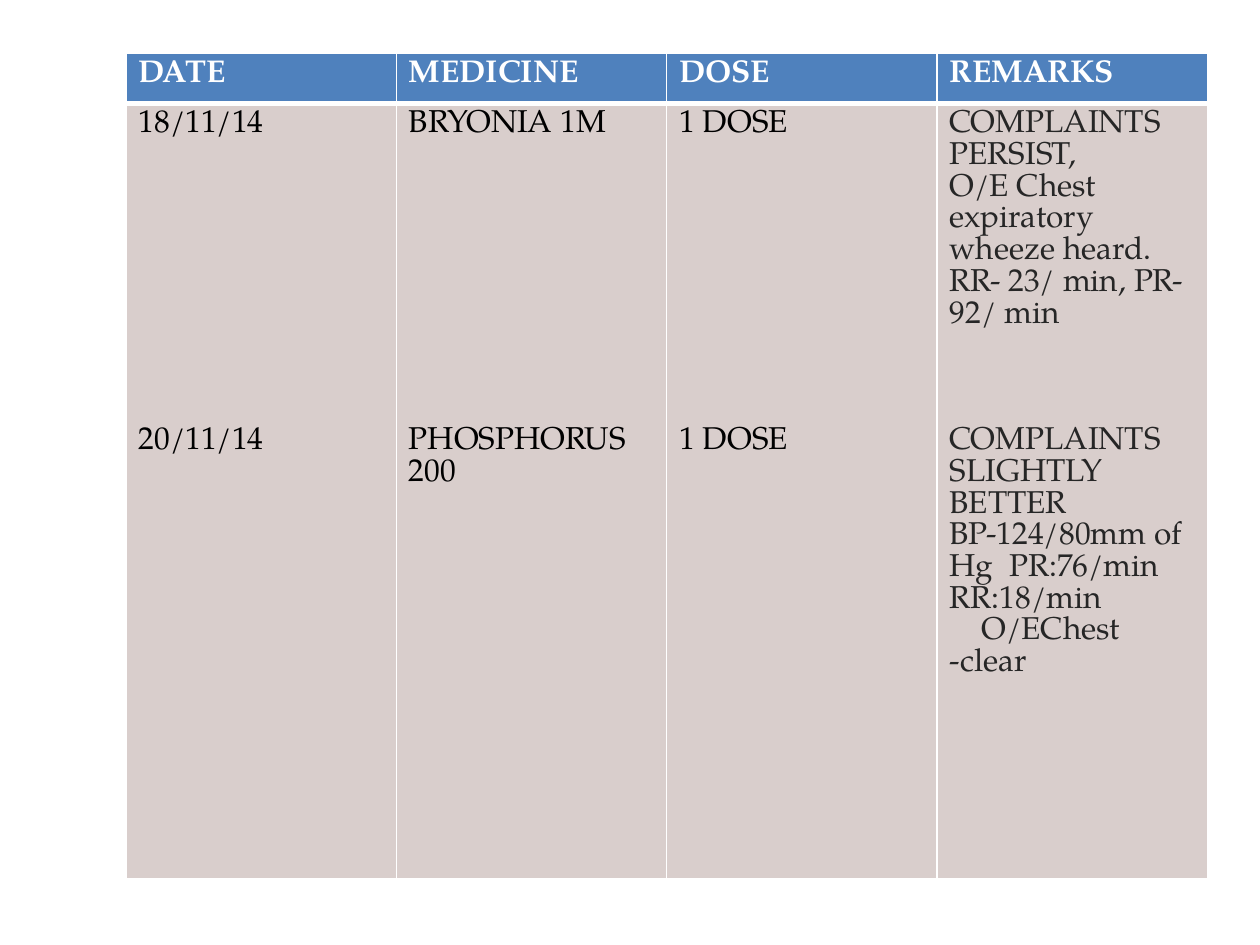
from dataclasses import dataclass

from lxml import etree
from pptx import Presentation
from pptx.dml.color import RGBColor
from pptx.oxml import ns
from pptx.util import Cm, Pt


@dataclass(frozen=True)
class Theme:
    font: str = "TeX Gyre Pagella"
    size: float = 18
    head: str = "4F81BD"
    body: str = "D9CECC"
    white: str = "FFFFFF"
    black: str = "000000"
    grey: str = "262626"
    thin: float = 1
    thick: float = 3


@dataclass(frozen=True)
class Para:
    text: str
    gap: float = 0
    indent: float = 0


@dataclass(frozen=True)
class Column:
    head: str
    paras: tuple[Para, ...]
    ink: str


THEME = Theme()
LINE = 18.1


def visits(first: str, second: str) -> tuple[Para, ...]:
    return Para(first), Para(second, gap=9 * LINE)


COLUMNS = (
    Column("DATE", visits("18/11/14", "20/11/14"), THEME.black),
    Column("MEDICINE", visits("BRYONIA 1M", "PHOSPHORUS 200"), THEME.black),
    Column("DOSE", visits("1 DOSE", "1 DOSE"), THEME.black),
    Column("REMARKS", (
        Para("COMPLAINTS PERSIST,"),
        Para("O/E Chest expiratory wheeze heard."),
        Para("RR- 23/ min, PR- 92/ min"),
        Para("COMPLAINTS SLIGHTLY BETTER", gap=3 * LINE),
        Para("BP-124/80mm of Hg  PR:76/min RR:18/min"),
        Para("O/EChest  -clear", indent=0.64),
    ), THEME.grey),
)


def edge(cell, side: str, width: float) -> None:
    props = cell._tc.get_or_add_tcPr()
    line = etree.SubElement(props, ns.qn(f"a:ln{side}"), w=str(Pt(width)))
    fill = etree.SubElement(line, ns.qn("a:solidFill"))
    etree.SubElement(fill, ns.qn("a:srgbClr"), val=THEME.white)


def write(cell, paras: tuple[Para, ...], ink: str, bold: bool) -> None:
    frame = cell.text_frame
    for index, item in enumerate(paras):
        para = frame.add_paragraph() if index else frame.paragraphs[0]
        if item.gap:
            para.space_before = Pt(item.gap)
        if item.indent:
            para._p.get_or_add_pPr().set("indent", str(Cm(item.indent)))
        run = para.add_run()
        run.text = item.text
        run.font.name = THEME.font
        run.font.size = Pt(THEME.size)
        run.font.bold = bold
        run.font.color.rgb = RGBColor.from_string(ink)


def style(cell, fill: str, top: float, base: float) -> None:
    for side, width in (("L", THEME.thin), ("R", THEME.thin),
                        ("T", top), ("B", base)):
        edge(cell, side, width)
    cell.fill.solid()
    cell.fill.fore_color.rgb = RGBColor.from_string(fill)


def main() -> None:
    deck = Presentation()
    deck.slide_width, deck.slide_height = Cm(25.4), Cm(19.05)
    slide = deck.slides.add_slide(deck.slide_layouts[6])
    rows = (1.02, 15.62)
    width = 5.45
    table = slide.shapes.add_table(
        len(rows), len(COLUMNS), Cm(2.54), Cm(1.07),
        Cm(width * len(COLUMNS)), Cm(sum(rows))).table
    table.horz_banding = False
    for row, height in zip(table.rows, rows):
        row.height = Cm(height)
    for index, column in enumerate(COLUMNS):
        table.columns[index].width = Cm(width)
        head, body = table.cell(0, index), table.cell(1, index)
        write(head, (Para(column.head),), THEME.white, True)
        style(head, THEME.head, THEME.thin, THEME.thick)
        write(body, column.paras, column.ink, False)
        style(body, THEME.body, THEME.thick, THEME.thin)
    deck.save("out.pptx")


if __name__ == "__main__":
    main()
